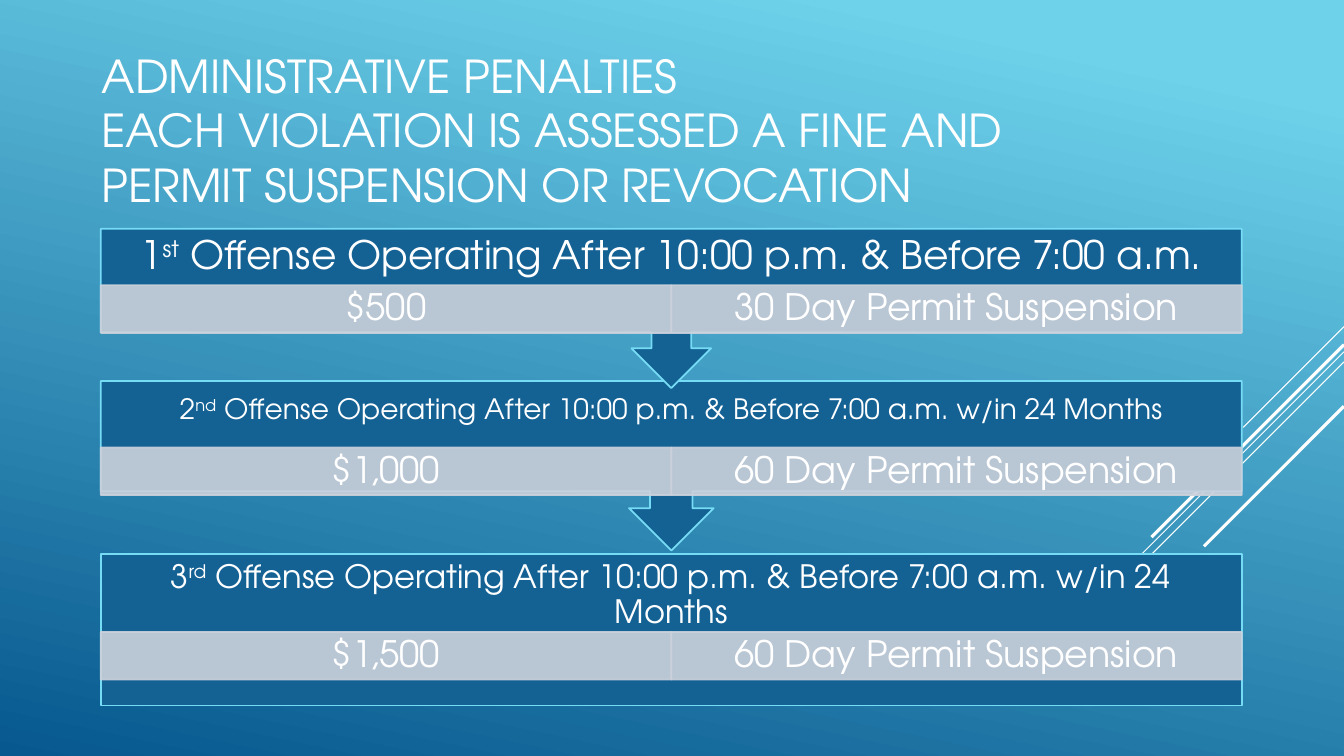
"""Build the slide of administrative penalties by offense."""
import pptx
import pptx.dml.color
import pptx.enum.dml
import pptx.enum.shapes
import pptx.enum.text
import pptx.oxml
import pptx.oxml.ns
import pptx.util

Pt = pptx.util.Pt
RGBColor = pptx.dml.color.RGBColor
Shape = pptx.enum.shapes.MSO_SHAPE
Align = pptx.enum.text.PP_ALIGN

WHITE = RGBColor(0xFF, 0xFF, 0xFF)
SKY = RGBColor(0x6E, 0xD2, 0xEB)
DEEP_BLUE = RGBColor(0x06, 0x58, 0x8E)
PANEL_BLUE = RGBColor(0x14, 0x61, 0x94)
PANEL_EDGE = RGBColor(0x76, 0xDB, 0xF4)
PALE_GREY = RGBColor(0xCC, 0xD2, 0xDC)

FONT = "TeX Gyre Adventor"
LEFT, WIDTH = 72, 815
VALUE_HEIGHT = 34

TITLE = (
    "ADMINISTRATIVE PENALTIES\v"
    "EACH VIOLATION IS ASSESSED A FINE AND PERMIT SUSPENSION OR REVOCATION"
)
HOURS = " Offense Operating After 10:00 p.m. & Before 7:00 a.m."
RAYS = [
    (233.3, 72, 0.75),
    (251.3, 234.7, 0.75),
    (258.5, 149, 0.75),
    (246.2, 137.5, 2.25),
    (290.2, 100, 2.25),
]
OFFENSES = [
    {
        "heading": ("3", "rd", HOURS + " w/in 24 Months"),
        "values": ("$1,500", "60 Day Permit Suspension"),
        "kind": Shape.RECTANGLE, "rotation": 0, "top": 396, "height": 108,
        "heading_height": 58.3, "value_top": 451.4, "size": 23, "inset": 13,
    },
    {
        "heading": ("2", "nd", HOURS + " w/in 24 Months"),
        "values": ("$1,000", "60 Day Permit Suspension"),
        "kind": Shape.UP_ARROW_CALLOUT, "rotation": 180, "top": 272.2, "height": 121,
        "heading_height": 42.5, "value_top": 319.7, "size": 20, "inset": 11.5,
    },
    {
        "heading": ("1", "st", HOURS),
        "values": ("$500", "30 Day Permit Suspension"),
        "kind": Shape.UP_ARROW_CALLOUT, "rotation": 180, "top": 163.4, "height": 113.8,
        "heading_height": 39.6, "value_top": 203.8, "size": 28, "inset": 15.8,
    },
]


def set_values(target, values):
    """Set each named attribute of the target."""
    for name, value in values.items():
        setattr(target, name, value)


def box(left, top, width, height):
    """Return a position and size in points."""
    return Pt(left), Pt(top), Pt(width), Pt(height)


def set_background(slide):
    """Fill the background with a blue gradient."""
    fill = slide.background.fill
    fill.gradient()
    fill.gradient_angle = 258
    for stop, color, position in zip(fill.gradient_stops, (SKY, DEEP_BLUE), (0.1, 1)):
        stop.color.rgb = color
        stop.position = position


def add_ray(slide, top, reach, weight):
    """Add a diagonal line running down from the right edge."""
    ray = slide.shapes.add_connector(
        pptx.enum.shapes.MSO_CONNECTOR.STRAIGHT,
        Pt(960), Pt(top), Pt(960 - reach), Pt(top + reach),
    )
    ray.line.color.rgb = WHITE
    ray.line.width = Pt(weight)
    properties = ray._element.spPr
    properties.append(pptx.oxml.parse_xml(
        "<a:effectLst %s/>" % pptx.oxml.ns.nsdecls("a")
    ))


def add_panel(slide, kind, place, fill, edge, opacity=100):
    """Add a filled and outlined shape."""
    shape = slide.shapes.add_shape(kind, *place)
    shape.shadow.inherit = False
    shape.fill.solid()
    shape.fill.fore_color.rgb = fill
    shape.line.color.rgb = edge
    shape.line.width = Pt(1.25)
    if opacity < 100:
        for color in shape._element.spPr.iter(pptx.oxml.ns.qn("a:srgbClr")):
            color.append(pptx.oxml.parse_xml(
                '<a:alpha %s val="%d"/>' % (pptx.oxml.ns.nsdecls("a"), opacity * 1000)
            ))
    return shape


def write(shape, pieces, size, insets, spacing=0.9, align=Align.CENTER):
    """Write one paragraph, raising every second piece."""
    across, down = insets
    frame = shape.text_frame
    set_values(frame, {
        "word_wrap": True,
        "vertical_anchor": pptx.enum.text.MSO_ANCHOR.MIDDLE,
        "margin_left": Pt(across), "margin_right": Pt(across),
        "margin_top": Pt(down), "margin_bottom": Pt(down),
    })
    paragraph = frame.paragraphs[0]
    set_values(paragraph, {"alignment": align, "line_spacing": spacing})
    for index, piece in enumerate(pieces):
        for number, line in enumerate(piece.split("\v")):
            if number:
                paragraph.add_line_break()
            run = paragraph.add_run()
            run.text = line
            set_values(run.font, {"name": FONT, "size": Pt(size)})
            run.font.color.rgb = WHITE
            if index % 2:
                run._r.get_or_add_rPr().set("baseline", "30000")


def add_offense(slide, offense):
    """Add a panel with its heading, fine and suspension."""
    top = offense["top"]
    panel = add_panel(
        slide, offense["kind"], box(LEFT, top, WIDTH, offense["height"]),
        PANEL_BLUE, PANEL_EDGE,
    )
    panel.rotation = offense["rotation"]
    heading = slide.shapes.add_textbox(*box(LEFT, top, WIDTH, offense["heading_height"]))
    write(heading, offense["heading"], offense["size"], (offense["inset"],) * 2)
    for column, value in enumerate(offense["values"]):
        place = box(
            LEFT + column * WIDTH / 2, offense["value_top"], WIDTH / 2, VALUE_HEIGHT
        )
        cell = add_panel(slide, Shape.RECTANGLE, place, PALE_GREY, PALE_GREY, 90)
        write(cell, [value], 26, (14.4, 2.9))


def main():
    """Build and save the presentation."""
    presentation = pptx.Presentation()
    set_values(presentation, {"slide_width": Pt(960), "slide_height": Pt(540)})
    slide = presentation.slides.add_slide(presentation.slide_layouts[6])
    set_background(slide)
    for ray in RAYS:
        add_ray(slide, *ray)
    title = slide.shapes.add_textbox(*box(65.5, 26.6, 708.5, 131.8))
    write(title, [TITLE], 32.4, (7.2, 3.6), 1.0, Align.LEFT)
    for offense in OFFENSES:
        add_offense(slide, offense)
    presentation.save("out.pptx")


if __name__ == "__main__":
    main()
